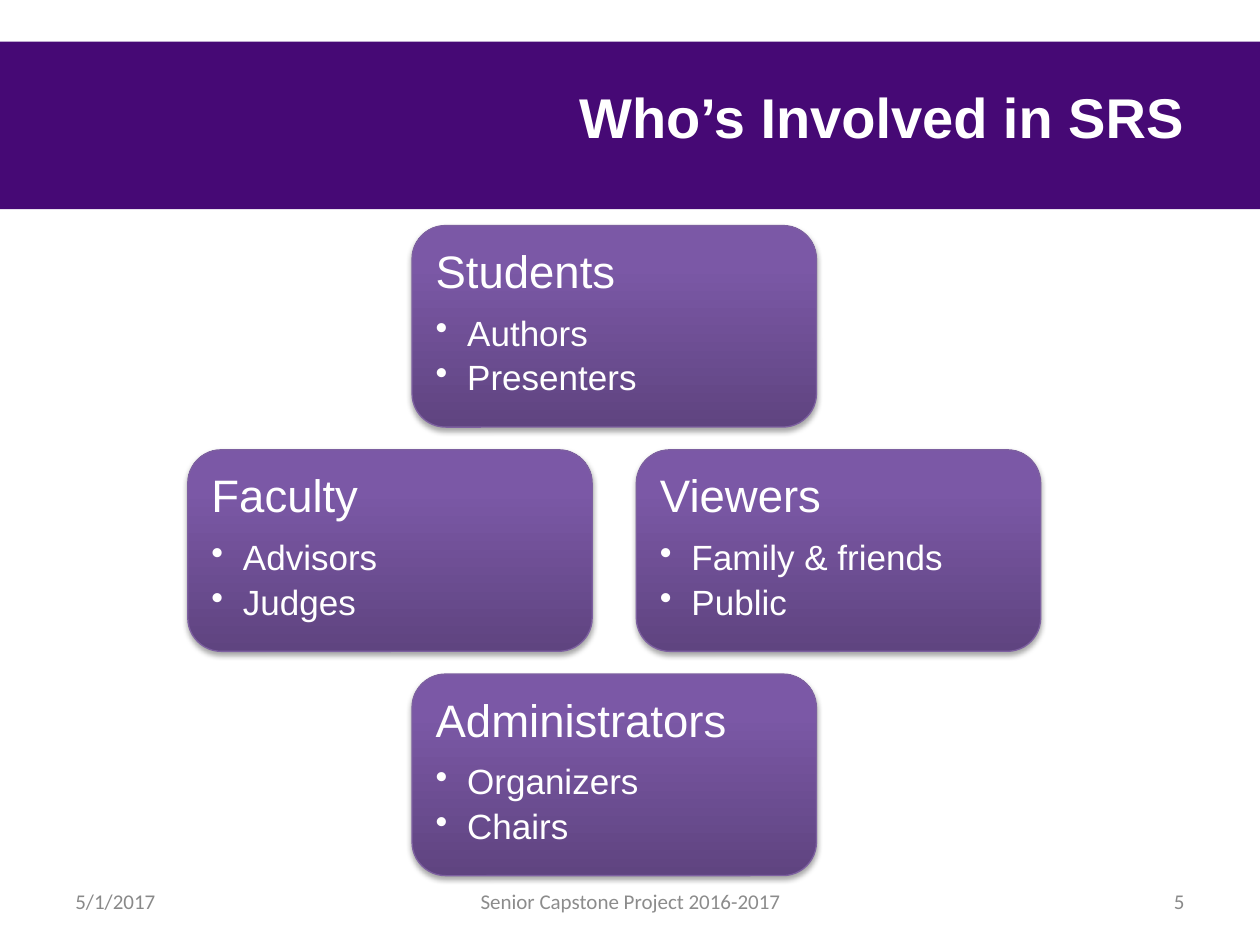
from copy import deepcopy

from lxml import etree
from pptx import Presentation
from pptx.dml.color import RGBColor
from pptx.enum.shapes import MSO_SHAPE
from pptx.enum.text import MSO_ANCHOR, PP_ALIGN
from pptx.oxml.ns import qn
from pptx.util import Inches, Pt

RECTANGLE = MSO_SHAPE.RECTANGLE
ROUNDED = MSO_SHAPE.ROUNDED_RECTANGLE
TOP, MIDDLE = MSO_ANCHOR.TOP, MSO_ANCHOR.MIDDLE
LEFT, CENTER, RIGHT = PP_ALIGN.LEFT, PP_ALIGN.CENTER, PP_ALIGN.RIGHT

WHITE = RGBColor(0xFF, 0xFF, 0xFF)
BAND_PURPLE = RGBColor(0x46, 0x09, 0x75)
CARD_DARK = RGBColor(0x5F, 0x44, 0x80)
CARD_MEDIUM = RGBColor(0x7B, 0x58, 0xA6)
CARD_LIGHT = RGBColor(0x7C, 0x57, 0xA8)
CARD_BORDER = RGBColor(0x7D, 0x60, 0xA0)
FOOTER_GRAY = RGBColor(0x89, 0x89, 0x89)
FOOTER_CENTER_GRAY = RGBColor(0x8C, 0x8C, 0x8C)

GRID_LEFT, GRID_TOP, GRID_STEP = 1.49, 1.79, 1.78
CARD_WIDTH, CARD_HEIGHT = 3.21, 1.6
FOOTER_TOP, FOOTER_HEIGHT = 6.95, 0.4

CARDS = [
    (1, 0, "Students", ["Authors", "Presenters"]),
    (2, 1, "Viewers", ["Family & friends", "Public"]),
    (1, 2, "Administrators", ["Organizers", "Chairs"]),
    (0, 1, "Faculty", ["Advisors", "Judges"]),
]


class SlideBuilder:
    heading_font = "Arial"
    footer_font = "Calibri"

    def __init__(self, slide):
        self.slide = slide

    def format_paragraph(self, paragraph, font_name, size, color, alignment=LEFT, bold=False):
        paragraph.alignment = alignment
        for run in paragraph.runs:
            run.font.name = font_name
            run.font.size = Pt(size)
            run.font.color.rgb = color
            run.font.bold = bold

    def band(self, left, top, width, height):
        shape = self.slide.shapes.add_shape(
            RECTANGLE, Inches(left), Inches(top), Inches(width), Inches(height))
        shape.shadow.inherit = False
        shape.fill.solid()
        shape.fill.fore_color.rgb = BAND_PURPLE
        shape.line.fill.background()

    def text(self, content, left, top, width, height, font_name, size, color, alignment, bold=False):
        box = self.slide.shapes.add_textbox(
            Inches(left), Inches(top), Inches(width), Inches(height))
        frame = box.text_frame
        frame.word_wrap = True
        frame.vertical_anchor = MIDDLE
        frame.text = content
        self.format_paragraph(frame.paragraphs[0], font_name, size, color, alignment, bold)

    def footer(self, content, left, width, color, alignment):
        self.text(content, left, FOOTER_TOP, width, FOOTER_HEIGHT,
                  self.footer_font, 12, color, alignment)

    def paint_gradient(self, shape):
        shape.fill.gradient()
        shape.fill.gradient_angle = 90
        stop_list = shape._element.spPr.find(qn("a:gradFill")).find(qn("a:gsLst"))
        stop_list.insert(1, deepcopy(stop_list[0]))
        stops = [(0, CARD_DARK), (0.8, CARD_MEDIUM), (1, CARD_LIGHT)]
        for stop, (position, color) in zip(shape.fill.gradient_stops, stops):
            stop.position = position
            stop.color.rgb = color

    def drop_shadow(self, shape):
        shape.shadow.inherit = False
        effects = shape._element.spPr.find(qn("a:effectLst"))
        shadow = etree.SubElement(effects, qn("a:outerShdw"), blurRad=str(Pt(3.1)),
                                  dist=str(Pt(1.8)), dir="5400000", rotWithShape="0")
        color = etree.SubElement(shadow, qn("a:srgbClr"), val="000000")
        etree.SubElement(color, qn("a:alpha"), val="35000")

    def add_bullet(self, paragraph):
        paragraph.level = 1
        properties = paragraph._p.get_or_add_pPr()
        properties.set("marL", str(Inches(0.25)))
        properties.set("indent", str(-Inches(0.25)))
        etree.SubElement(properties, qn("a:buChar"), char="•")

    def card(self, column, row, heading, items):
        shape = self.slide.shapes.add_shape(
            ROUNDED, Inches(GRID_LEFT + column * GRID_STEP),
            Inches(GRID_TOP + row * GRID_STEP), Inches(CARD_WIDTH), Inches(CARD_HEIGHT))
        self.paint_gradient(shape)
        shape.line.color.rgb = CARD_BORDER
        shape.line.width = Pt(0.75)
        self.drop_shadow(shape)
        frame = shape.text_frame
        frame.word_wrap = True
        frame.vertical_anchor = TOP
        frame.margin_left = frame.margin_right = Inches(0.11)
        frame.margin_top = frame.margin_bottom = Inches(0.11)
        frame.text = "\n".join([heading, *items])
        for index, paragraph in enumerate(frame.paragraphs):
            if index:
                self.add_bullet(paragraph)
            paragraph.line_spacing = 0.9
            paragraph.space_after = Pt(4 if index else 10)
            self.format_paragraph(paragraph, self.heading_font, 20 if index else 26, WHITE)


def main():
    presentation = Presentation()
    presentation.slide_width = Inches(10)
    presentation.slide_height = Inches(7.5)
    builder = SlideBuilder(presentation.slides.add_slide(presentation.slide_layouts[6]))
    builder.band(-0.25, 0.33, 10.5, 1.33)
    builder.text("Who’s Involved in SRS", 2.5, 0.3, 7, 1.25,
                 builder.heading_font, 32, WHITE, RIGHT, bold=True)
    builder.footer("5/1/2017", 0.5, 2.33, FOOTER_GRAY, LEFT)
    builder.footer("5", 7.17, 2.33, FOOTER_GRAY, RIGHT)
    builder.footer("Senior Capstone Project 2016-2017", 3.42, 3.17, FOOTER_CENTER_GRAY, CENTER)
    for card in CARDS:
        builder.card(*card)
    presentation.save("out.pptx")


if __name__ == "__main__":
    main()
